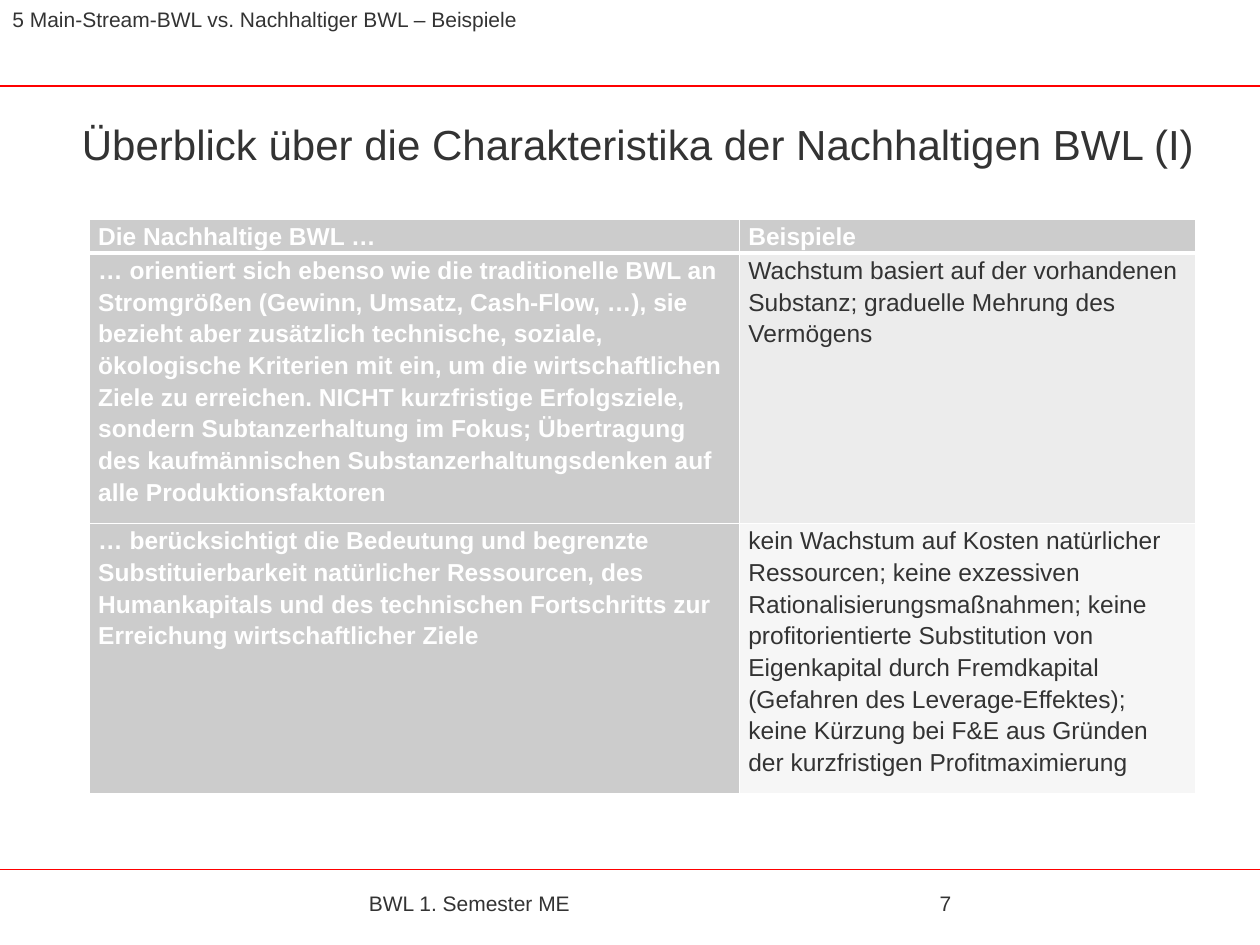
import pptx
import pptx.util
import pptx.dml.color
import pptx.enum.shapes
import pptx.enum.text
import pptx.oxml
import pptx.oxml.ns

Inches = pptx.util.Inches
Pt = pptx.util.Pt
Anchor = pptx.enum.text.MSO_ANCHOR
LEFT = pptx.enum.text.PP_ALIGN.LEFT
INK, WHITE, GREY, RED = "333333", "FFFFFF", "CCCCCC", "FF0000"
NS = pptx.oxml.ns.nsdecls("a")

ROWS = [
    ("Die Nachhaltige BWL …", "Beispiele"),
    ("… orientiert sich ebenso wie die traditionelle BWL an Stromgrößen "
     "(Gewinn, Umsatz, Cash-Flow, …), sie bezieht aber zusätzlich technische, "
     "soziale, ökologische Kriterien mit ein, um die wirtschaftlichen Ziele zu "
     "erreichen. NICHT kurzfristige Erfolgsziele, sondern Subtanzerhaltung im "
     "Fokus; Übertragung des kaufmännischen Substanzerhaltungsdenken auf alle "
     "Produktionsfaktoren",
     "Wachstum basiert auf der vorhandenen Substanz; graduelle Mehrung des "
     "Vermögens"),
    ("… berücksichtigt die Bedeutung und begrenzte Substituierbarkeit "
     "natürlicher Ressourcen, des Humankapitals und des technischen "
     "Fortschritts zur Erreichung wirtschaftlicher Ziele",
     "kein Wachstum auf Kosten natürlicher Ressourcen; keine exzessiven "
     "Rationalisierungsmaßnahmen; keine profitorientierte Substitution von "
     "Eigenkapital durch Fremdkapital (Gefahren des Leverage-Effektes); keine "
     "Kürzung bei F&E aus Gründen der kurzfristigen Profitmaximierung"),
]


def color(code):
    """Turn a hex string into a colour."""
    return pptx.dml.color.RGBColor.from_string(code)


def apply(item, values):
    """Set every attribute named in a dict of values."""
    for name, value in values.items():
        setattr(item, name, value)


def write(frame, text, size, code=INK, bold=False, space=1.0):
    """Write one formatted paragraph into a text frame."""
    frame.text = text
    para = frame.paragraphs[0]
    apply(para, {"alignment": LEFT, "line_spacing": space})
    font = para.runs[0].font
    apply(font, {"name": "Arial", "size": Pt(size), "bold": bold})
    font.color.rgb = color(code)


def add_title(slide, box, text):
    """Move and fill the title placeholder."""
    title = slide.shapes.title
    apply(title, dict(zip(("left", "top", "width", "height"), map(Inches, box))))
    frame = title.text_frame
    apply(frame, {"word_wrap": True, "vertical_anchor": Anchor.BOTTOM,
                  "auto_size": pptx.enum.text.MSO_AUTO_SIZE.NONE})
    write(frame, text, 24)


def add_label(slide, box, text, anchor):
    """Place a small line of text in the box."""
    frame = slide.shapes.add_textbox(*map(Inches, box)).text_frame
    apply(frame, {"word_wrap": True, "vertical_anchor": anchor})
    write(frame, text, 12)


def add_rule(slide, left, top, width):
    """Draw a thin red rule."""
    kind = pptx.enum.shapes.MSO_CONNECTOR.STRAIGHT
    rule = slide.shapes.add_connector(
        kind, Inches(left), Inches(top), Inches(left + width), Inches(top))
    rule.line.color.rgb = color(RED)
    rule.line.width = Pt(1)
    rule._element.spPr.append(pptx.oxml.parse_xml(f"<a:effectLst {NS}/>"))


def add_edges(cell, edges):
    """Give a cell white borders of the given point widths."""
    props = cell._tc.get_or_add_tcPr()
    for spot, (side, width) in enumerate(edges.items()):
        props.insert(spot, pptx.oxml.parse_xml(
            f'<a:ln{side} {NS} w="{Pt(width)}"><a:solidFill>'
            f'<a:srgbClr val="{WHITE}"/></a:solidFill></a:ln{side}>'))


def add_grid(slide, box, cols, heights):
    """Place the table of traits and examples."""
    grid = slide.shapes.add_table(len(ROWS), len(cols), *map(Inches, box)).table
    for col, width in zip(grid.columns, cols):
        col.width = Inches(width)
    for row, height in zip(grid.rows, heights):
        row.height = Inches(height)
    fills = [(GREY, GREY), (GREY, "ECECEC"), (GREY, "F6F6F6")]
    pad = {"margin_left": Inches(0.07), "margin_right": Inches(0.07),
           "margin_top": 0, "margin_bottom": 0}
    for r, texts in enumerate(ROWS):
        for c, text in enumerate(texts):
            cell = grid.cell(r, c)
            head = r == 0 or c == 0
            apply(cell, pad)
            cell.fill.solid()
            cell.fill.fore_color.rgb = color(fills[r][c])
            write(cell.text_frame, text, 14, WHITE if head else INK, head, 1.15)
            add_edges(cell, {"L": 1, "R": 1, "T": 3 if r == 1 else 1,
                             "B": 3 if r == 0 else 1})


def main():
    """Build and save the slide."""
    deck = pptx.Presentation()
    apply(deck, {"slide_width": Inches(10), "slide_height": Inches(7.5)})
    slide = deck.slides.add_slide(deck.slide_layouts[5])
    for top in (0.68, 6.9):
        add_rule(slide, 0, top, 10)
    add_title(slide, (0.55, 0.72, 9.13, 0.67),
              "Überblick über die Charakteristika der Nachhaltigen BWL (I)")
    add_label(slide, (2.83, 7, 4.33, 0.33), "BWL 1. Semester ME", Anchor.MIDDLE)
    add_label(slide, (7.36, 7, 2.08, 0.33), "7", Anchor.MIDDLE)
    add_grid(slide, (0.71, 1.74, 8.78, 4.26), (5.16, 3.62), (0.24, 2.01, 2.01))
    add_label(slide, (0, 0, 10.22, 0.34),
              "5 Main-Stream-BWL vs. Nachhaltiger BWL – Beispiele", Anchor.TOP)
    deck.save("out.pptx")


if __name__ == "__main__":
    main()
